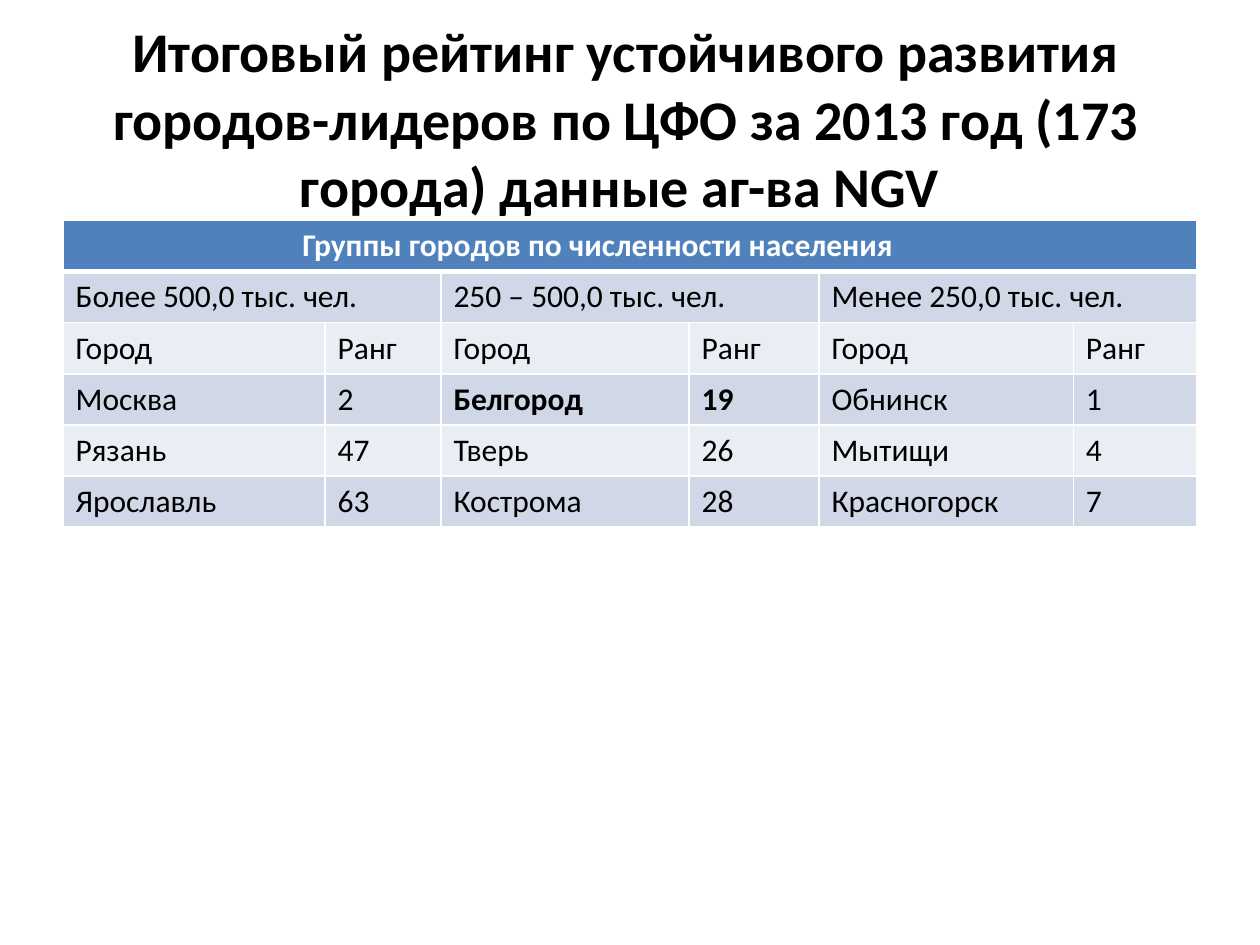
from lxml import etree
from pptx import Presentation
from pptx.dml.color import RGBColor
from pptx.enum.text import MSO_ANCHOR, MSO_AUTO_SIZE, PP_ALIGN
from pptx.oxml.ns import qn
from pptx.util import Inches, Pt

MIDDLE = MSO_ANCHOR.MIDDLE
NO_FIT = MSO_AUTO_SIZE.NONE
CENTER = PP_ALIGN.CENTER

BLACK = RGBColor(0x00, 0x00, 0x00)
WHITE = RGBColor(0xFF, 0xFF, 0xFF)
BLUE = RGBColor(0x4F, 0x81, 0xBD)
DARK = RGBColor(0xD0, 0xD8, 0xE8)
LIGHT = RGBColor(0xE9, 0xED, 0xF4)


def write(frame, text, size, color, bold):
    run = frame.paragraphs[0].add_run()
    run.text = text
    run.font.color.rgb = color
    style = {"name": "Calibri", "size": Pt(size), "bold": bold}
    for key, value in style.items():
        setattr(run.font, key, value)


def edge(cell, side, width):
    props = cell._tc.get_or_add_tcPr()
    line = etree.Element(qn(f"a:ln{side}"), w=str(Pt(width)))
    fill = etree.SubElement(line, qn("a:solidFill"))
    etree.SubElement(fill, qn("a:srgbClr"), val=str(WHITE))
    # Borders come before the fill, in the order L, R, T, B
    props.insert("LRTB".index(side), line)


prs = Presentation()
prs.slide_width, prs.slide_height = Inches(10), Inches(7.5)
slide = prs.slides.add_slide(prs.slide_layouts[5])

# Title
title = slide.shapes.title
place = {"left": 0.47, "top": 0.31, "width": 9, "height": 1.25}
for key, value in place.items():
    setattr(title, key, Inches(value))
frame = title.text_frame
layout = {"word_wrap": True, "auto_size": NO_FIT, "vertical_anchor": MIDDLE}
for key, value in layout.items():
    setattr(frame, key, value)
frame.paragraphs[0].alignment = CENTER
write(frame, "Итоговый рейтинг устойчивого развития городов-лидеров "
      "по ЦФО за 2013 год (173 города) данные аг-ва NGV ", 32, BLACK, True)

# Table content: None marks a cell covered by the one to its left
HEAD = "Группы городов по численности населения"
rows = [
    [HEAD] + [None] * 5,
    ["Более 500,0 тыс. чел.", None, "250 – 500,0 тыс. чел.", None,
     "Менее 250,0 тыс. чел.", None],
    ["Город", "Ранг"] * 3,
    ["Москва", "2", "Белгород", "19", "Обнинск", "1"],
    ["Рязань", "47", "Тверь", "26", "Мытищи", "4"],
    ["Ярославль", "63", "Кострома", "28", "Красногорск", "7"],
]
widths = [2.08, 0.92, 1.97, 1.03, 2.02, 0.98]
strong = {"Белгород", "19", HEAD}

# Table grid
table = slide.shapes.add_table(len(rows), len(widths), Inches(0.5),
                               Inches(1.75), Inches(9), Inches(2.43)).table
for col, width in zip(table.columns, widths):
    col.width = Inches(width)
for row in table.rows:
    row.height = Inches(2.43) // len(rows)

# Merged headings
table.cell(0, 0).merge(table.cell(0, 5))
for left in range(0, 6, 2):
    table.cell(1, left).merge(table.cell(1, left + 1))

# Cells: fills alternate below the blue head row
for r, row in enumerate(rows):
    back = BLUE if r == 0 else (DARK if r % 2 else LIGHT)
    for c, text in enumerate(row):
        cell = table.cell(r, c)
        cell.fill.solid()
        cell.fill.fore_color.rgb = back
        for side in "LRTB":
            thick = (r, side) in [(0, "B"), (1, "T")]
            edge(cell, side, 3 if thick else 1)
        if text:
            color = BLACK if r else WHITE
            write(cell.text_frame, text, 18, color, text in strong)

# Paragraph indent for the head: a wide cell margin would stretch the table
head = table.cell(0, 0).text_frame.paragraphs[0]
head._p.get_or_add_pPr().set("marL", str(Inches(1.8)))

prs.save("out.pptx")
